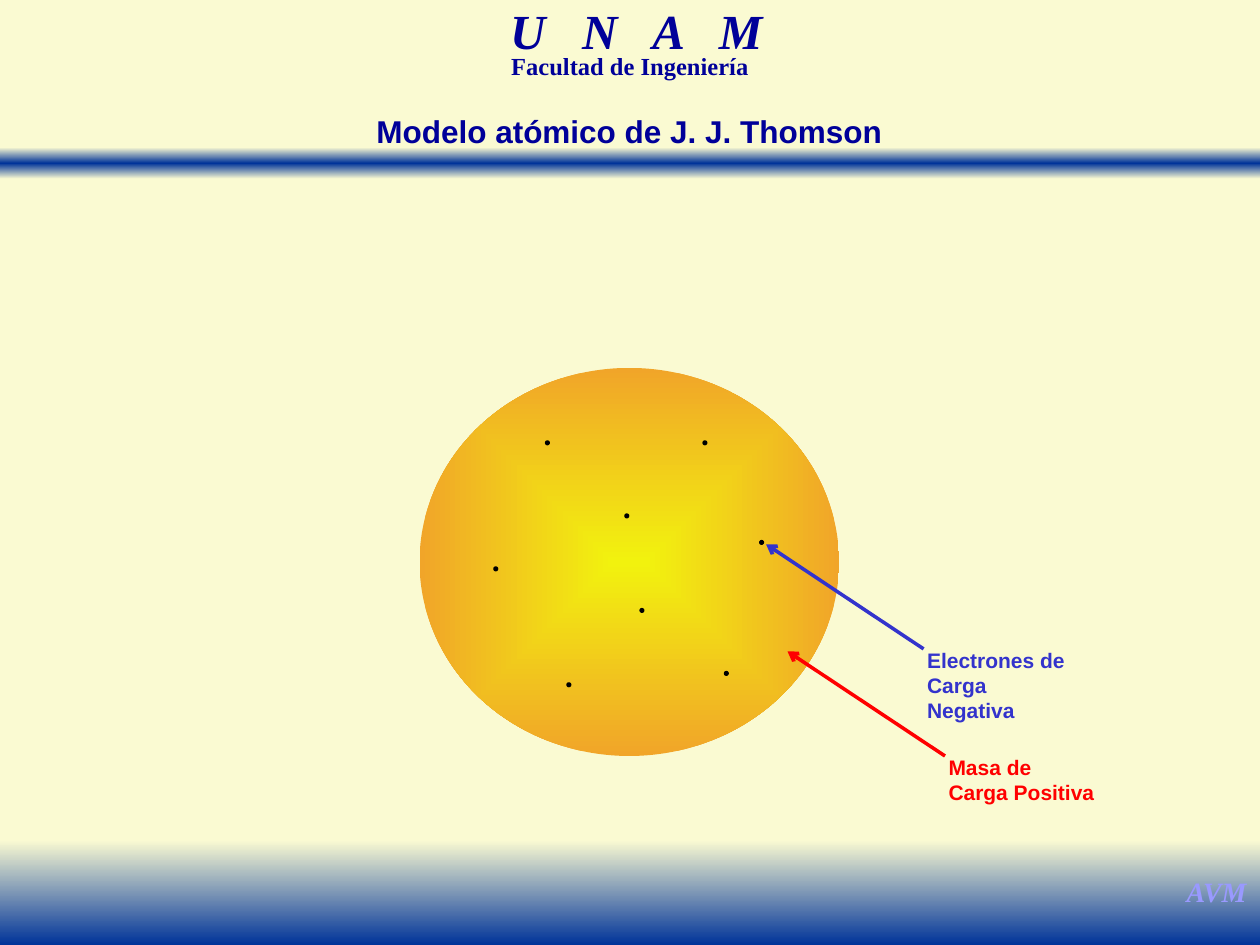
from dataclasses import dataclass
from typing import NamedTuple

from lxml import etree
from pptx import Presentation
from pptx import util as u
from pptx.dml.color import RGBColor
from pptx.enum import shapes, text
from pptx.oxml import ns


@dataclass(frozen=True)
class Theme:
    cream: str = "FAFAD2"
    blue: str = "003399"
    navy: str = "000099"
    lilac: str = "9999FF"
    indigo: str = "3333CC"
    red: str = "FF0000"
    black: str = "000000"
    yellow: str = "F2F20E"
    orange: str = "F1A529"
    serif: str = "Times New Roman"
    sans: str = "Arial"
    name_size: int = 28
    title_size: int = 18
    initials_size: int = 16
    faculty_size: int = 14
    label_size: int = 12


class Box(NamedTuple):
    x: float
    y: float
    w: float
    h: float

    def emu(self) -> list:
        return [u.Inches(v) for v in self]


@dataclass(frozen=True)
class Style:
    size: int
    color: str
    font: str
    italic: bool = False
    align: text.PP_ALIGN = text.PP_ALIGN.CENTER
    line_spacing: float = 1.0


@dataclass(frozen=True)
class Callout:
    lines: tuple
    box: Box
    start: tuple
    end: tuple
    color: str


T = Theme()
BANDS = [
    (Box(0, 1.17, 10, 0.25), [(0, T.cream), (50, T.blue), (100, T.cream)]),
    (Box(0, 6.67, 10, 0.83), [(0, T.cream), (100, T.blue)]),
]
ATOM = Box(3.33, 2.92, 3.33, 3.08)
ELECTRON_SIZE = 0.03
ELECTRONS = [(4.33, 3.5), (5.58, 3.5), (4.96, 4.08), (3.92, 4.5),
             (6.03, 4.29), (5.08, 4.83), (5.75, 5.33), (4.5, 5.42)]
CALLOUTS = [
    Callout(("Masa de", "Carga Positiva"), Box(7.43, 5.94, 1.36, 0.5),
            (7.5, 6), (6.25, 5.17), T.red),
    Callout(("Electrones de", "Carga Negativa"), Box(7.26, 5.09, 1.41, 0.5),
            (7.33, 5.15), (6.08, 4.32), T.indigo),
]


def rgb(color: str) -> RGBColor:
    return RGBColor.from_string(color)


def add_child(parent, tag: str, **attrs):
    return etree.SubElement(parent, ns.qn(tag), attrs)


def write(sp, lines: tuple, style: Style, wrap: bool = True) -> None:
    tf = sp.text_frame
    tf.word_wrap = wrap
    tf.auto_size = text.MSO_AUTO_SIZE.SHAPE_TO_FIT_TEXT
    tf.vertical_anchor = text.MSO_ANCHOR.TOP
    for i, line in enumerate(lines):
        p = tf.paragraphs[0] if i == 0 else tf.add_paragraph()
        p.text = line
        p.alignment = style.align
        p.line_spacing = style.line_spacing
        p.font.name = style.font
        p.font.size = u.Pt(style.size)
        p.font.bold = True
        p.font.italic = style.italic
        p.font.color.rgb = rgb(style.color)


def add_text(parent, box: Box, lines: tuple, style: Style, wrap: bool = True):
    sp = parent.add_textbox(*box.emu())
    write(sp, lines, style, wrap)
    return sp


def add_gradient(parent, kind, box: Box, stops: list, radial: bool = False) -> None:
    sp = parent.add_shape(kind, *box.emu())
    sp.shadow.inherit = False
    sp.line.fill.background()
    sp.fill.gradient()
    grad = sp._element.spPr.find(ns.qn("a:gradFill"))
    for child in list(grad):
        grad.remove(child)
    stop_list = add_child(grad, "a:gsLst")
    for position, color in stops:
        stop = add_child(stop_list, "a:gs", pos=str(position * 1000))
        add_child(stop, "a:srgbClr", val=color)
    if radial:
        center = add_child(grad, "a:path", path="shape")
        add_child(center, "a:fillToRect", l="50000", t="50000", r="50000", b="50000")
    else:
        add_child(grad, "a:lin", ang="5400000", scaled="1")


def add_electron(parent, x: float, y: float) -> None:
    box = Box(x, y, ELECTRON_SIZE, ELECTRON_SIZE)
    sp = parent.add_shape(shapes.MSO_SHAPE.OVAL, *box.emu())
    sp.shadow.inherit = False
    sp.fill.solid()
    sp.fill.fore_color.rgb = rgb(T.black)
    sp.line.color.rgb = rgb(T.black)
    sp.line.width = u.Pt(0.75)


def add_callout(parent, callout: Callout) -> None:
    group = parent.add_group_shape().shapes
    points = [u.Inches(v) for v in callout.start + callout.end]
    line = group.add_connector(shapes.MSO_CONNECTOR.STRAIGHT, *points)
    line.line.color.rgb = rgb(callout.color)
    line.line.width = u.Pt(2)
    add_child(line.line._get_or_add_ln(), "a:tailEnd", type="arrow")
    add_child(line._element.spPr, "a:effectLst")
    style = Style(T.label_size, callout.color, T.sans, align=text.PP_ALIGN.LEFT)
    add_text(group, callout.box, callout.lines, style, wrap=False)


def main() -> None:
    prs = Presentation()
    prs.slide_width, prs.slide_height = u.Inches(10), u.Inches(7.5)
    s = prs.slides.add_slide(prs.slide_layouts[5])
    s.background.fill.solid()
    s.background.fill.fore_color.rgb = rgb(T.cream)

    title = s.shapes.title
    title.left, title.top, title.width, title.height = Box(2.83, 0.84, 4.33, 0.4).emu()
    write(title, ("Modelo atómico de J. J. Thomson",),
          Style(T.title_size, T.navy, T.sans))

    for box, stops in BANDS:
        add_gradient(s.shapes, shapes.MSO_SHAPE.RECTANGLE, box, stops)
    name = add_text(s.shapes, Box(3.09, 0.08, 3.92, 0.43), ("U N A M",),
                    Style(T.name_size, T.navy, T.serif, italic=True, line_spacing=0.7))
    name.text_frame.paragraphs[0].runs[0].font._element.set("spc", "700")
    add_text(s.shapes, Box(3.21, 0.42, 3.58, 0.26), ("Facultad de Ingeniería",),
             Style(T.faculty_size, T.navy, T.serif, line_spacing=0.7))
    add_text(s.shapes, Box(9.31, 6.89, 0.69, 0.37), ("AVM",),
             Style(T.initials_size, T.lilac, T.serif, italic=True), wrap=False)

    add_gradient(s.shapes, shapes.MSO_SHAPE.OVAL, ATOM,
                 [(0, T.yellow), (100, T.orange)], radial=True)
    electrons = s.shapes.add_group_shape().shapes
    for x, y in ELECTRONS:
        add_electron(electrons, x, y)
    for callout in CALLOUTS:
        add_callout(s.shapes, callout)

    prs.save("out.pptx")


if __name__ == "__main__":
    main()
